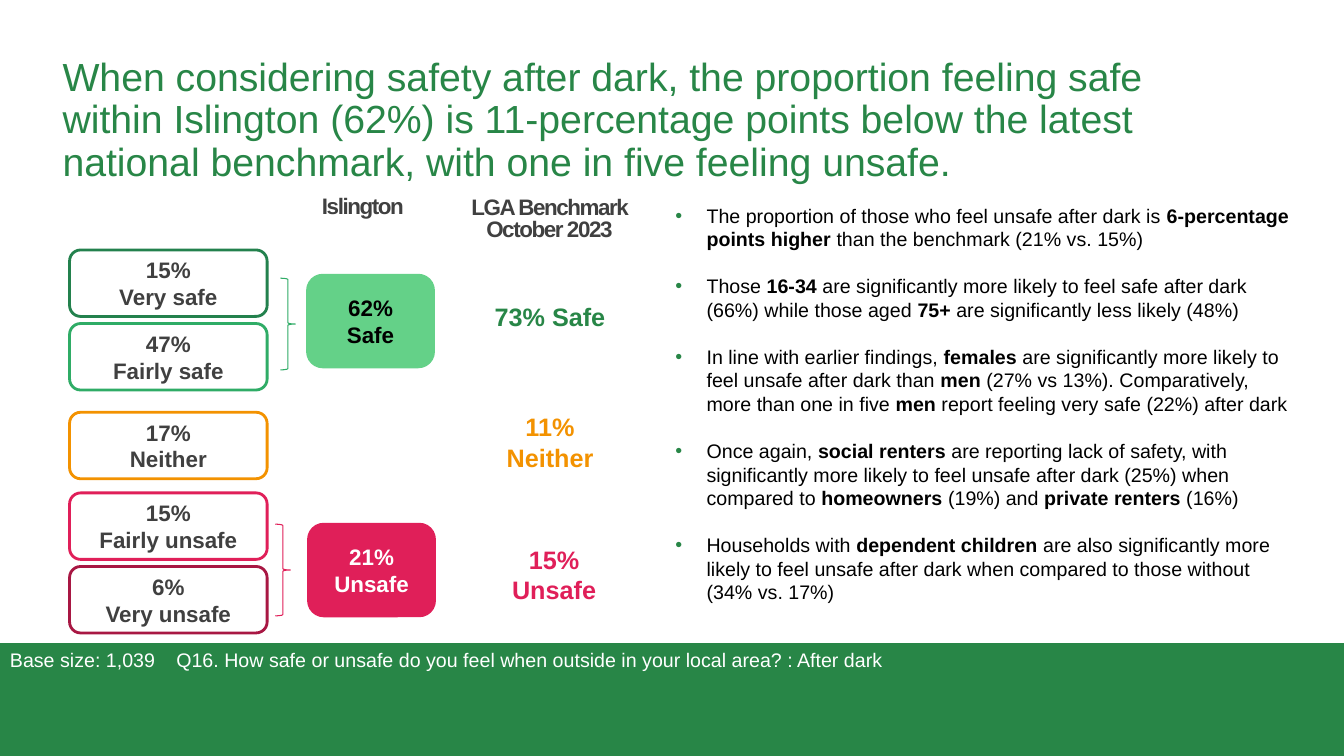
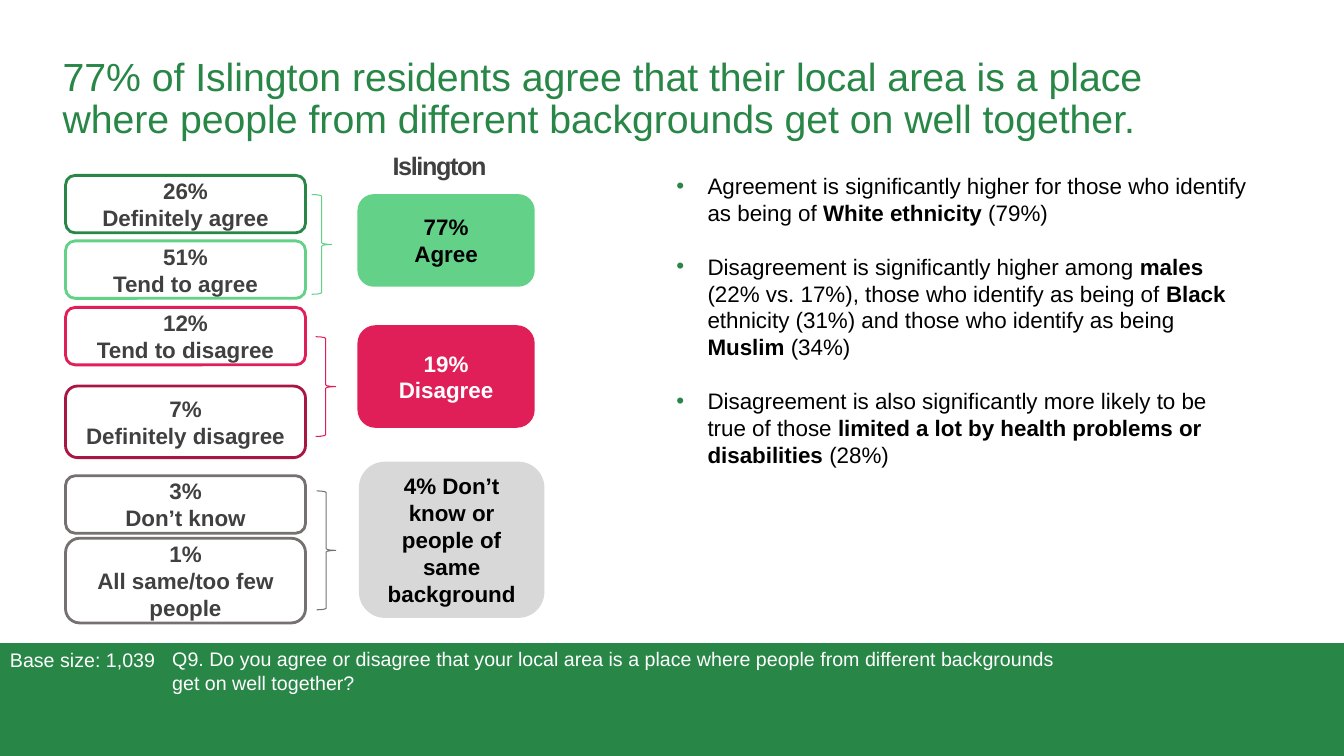
from lxml.etree import SubElement
from pptx import Presentation
from pptx.dml.color import RGBColor
from pptx.enum.shapes import MSO_SHAPE as Shape
from pptx.enum.text import MSO_ANCHOR as Anchor, MSO_AUTO_SIZE as AutoSize, PP_ALIGN as Align
from pptx.oxml.ns import qn
from pptx.util import Inches, Pt

COLORS = {
    "brand": "288647", "dark_green": "23814D", "green": "2FAC66", "light_green": "64D188",
    "amber": "F39200", "red": "E01F59", "dark_red": "A81743", "grey": "767171",
    "light_grey": "D8D8D8", "label": "404040", "black": "000000", "white": "FFFFFF",
}
FONT = "Arial"
TITLE_BOX = (0.62, 0.57, 11.5, 1.16)
BAND_BOX = (0, 6.38, 13.33, 1.12)
BASE_SIZE = "Base size: 1,039"


def color(name):
    return RGBColor.from_string(COLORS[name])


def write(frame, text, size=16, ink="black", bold=False, align=Align.LEFT, anchor=Anchor.TOP,
          insets=(0.1, 0.05, 0.1, 0.05), wrap=True, leading=None, tracking=None,
          gap=0, bullet=None):
    """Fill a text frame: one paragraph per line, **...** marks bold spans."""
    frame.auto_size = AutoSize.NONE
    frame.word_wrap = wrap
    frame.vertical_anchor = anchor
    (frame.margin_left, frame.margin_top,
     frame.margin_right, frame.margin_bottom) = map(Inches, insets)
    for index, line in enumerate(text.split("\n")):
        para = frame.add_paragraph() if index else frame.paragraphs[0]
        if bullet:
            add_bullet(para, bullet)
        para.alignment = align
        para.space_before = Pt(gap if index else 0)
        if leading:
            para.line_spacing = leading
        for part, words in enumerate(line.split("**")):
            if not words:
                continue
            span = para.add_run()
            span.text = words
            span.font.name = FONT
            span.font.size = Pt(size)
            span.font.bold = bold or part % 2 == 1
            span.font.color.rgb = color(ink)
            if tracking is not None:
                span.font._element.set("spc", str(int(tracking * 100)))


def add_bullet(para, ink, indent=0.31):
    props = para._p.get_or_add_pPr()
    props.set("marL", str(Inches(indent)))
    props.set("indent", str(-Inches(indent)))
    tint = SubElement(props, qn("a:buClr"))
    SubElement(tint, qn("a:srgbClr")).set("val", COLORS[ink])
    SubElement(props, qn("a:buFont")).set("typeface", FONT)
    SubElement(props, qn("a:buChar")).set("char", "•")


def add_text(page, box, text, **format):
    write(page.shapes.add_textbox(*map(Inches, box)).text_frame, text, **format)


def add_figure(page, kind, box, fill=None, line=None, weight=2):
    shape = page.shapes.add_shape(kind, *map(Inches, box))
    shape.shadow.inherit = False
    if fill:
        shape.fill.solid()
        shape.fill.fore_color.rgb = color(fill)
    else:
        shape.fill.background()
    if line:
        shape.line.color.rgb = color(line)
        shape.line.width = Pt(weight)
    else:
        shape.line.fill.background()
    return shape


def add_tile(page, box, text, ink="label", **look):
    tile = add_figure(page, Shape.ROUNDED_RECTANGLE, box, **look)
    write(tile.text_frame, text, ink=ink, bold=True, align=Align.CENTER, anchor=Anchor.MIDDLE)


def add_heading(page, box, text, size=16):
    add_text(page, box, text, size=size, ink="label", bold=True, align=Align.CENTER,
             insets=(0, 0.04, 0, 0.04), leading=0.8, tracking=-1)


def add_answers(page, box, answers):
    """Stack outlined answers; each has a gap above, a height, a text and a colour."""
    left, top, width = box
    for gap, height, text, line in answers:
        top += gap
        add_tile(page, (left, top, width, height), text, line=line)
        top += height


def add_brace(page, box, line):
    add_figure(page, Shape.RIGHT_BRACE, box, line=line, weight=0.75)


def add_findings(page, box, findings, size):
    add_text(page, box, "\n".join(findings), size=size, gap=size * 1.2, bullet="brand")


def add_question(page, box, text):
    add_text(page, (0, BAND_BOX[1], 1.65, 0.34), BASE_SIZE, size=14, ink="white", wrap=False)
    add_text(page, box, text, size=14, ink="white")


def add_page(deck, title):
    page = deck.slides.add_slide(deck.slide_layouts[5])
    holder = page.shapes.title
    holder.left, holder.top, holder.width, holder.height = map(Inches, TITLE_BOX)
    write(holder.text_frame, title, size=28, ink="brand", insets=(0, 0, 0, 0), leading=0.9)
    return page


def add_safety_page(deck):
    page = add_page(deck, "When considering safety after dark, the proportion feeling safe within "
                    "Islington (62%) is 11-percentage points below the latest national benchmark, "
                    "with one in five feeling unsafe.")
    add_answers(page, (0.69, 2.48, 1.96), [
        (0, 0.66, "15%\nVery safe", "dark_green"),
        (0.07, 0.66, "47%\nFairly safe", "green"),
        (0.22, 0.66, "17%\nNeither", "amber"),
        (0.14, 0.66, "15%\nFairly unsafe", "red"),
        (0.07, 0.66, "6%\nVery unsafe", "dark_red"),
    ])
    add_brace(page, (2.78, 2.76, 0.15, 0.91), "green")
    add_brace(page, (2.73, 5.2, 0.15, 0.91), "red")

    # Totals
    add_heading(page, (3.05, 1.92, 1.1, 0.55), "Islington")
    add_tile(page, (3.05, 2.73, 1.25, 0.91), "62%\nSafe", "black",
             fill="light_green", line="light_green")
    add_tile(page, (3.06, 5.2, 1.25, 0.91), "21%\nUnsafe", "white", fill="red", line="red")

    # Benchmark
    add_heading(page, (4.6, 1.93, 1.7, 0.55), "LGA Benchmark October 2023")
    for left, top, text, ink in [
        (4.65, 2.68, "73% Safe", "brand"),
        (4.65, 3.93, "11%\nNeither", "amber"),
        (4.69, 5.24, "15%\nUnsafe", "red"),
    ]:
        add_text(page, (left, top, 1.61, 0.91), text, size=18, ink=ink, bold=True,
                 align=Align.CENTER, anchor=Anchor.MIDDLE)

    add_findings(page, (6.6, 1.97, 6.36, 4.11), [
        "The proportion of those who feel unsafe after dark is **6-percentage points higher** "
        "than the benchmark (21% vs. 15%)",
        "Those **16-34** are significantly more likely to feel safe after dark (66%) while those "
        "aged **75+** are significantly less likely (48%)",
        "In line with earlier findings, **females** are significantly more likely to feel unsafe "
        "after dark than **men** (27% vs 13%). Comparatively, more than one in five **men** "
        "report feeling very safe (22%) after dark",
        "Once again, **social renters** are reporting lack of safety, with significantly more "
        "likely to feel unsafe after dark (25%) when compared to **homeowners** (19%) and "
        "**private renters** (16%)",
        "Households with **dependent children** are also significantly more likely to feel unsafe "
        "after dark when compared to those without (34% vs. 17%)",
    ], size=14)
    add_question(page, (1.65, 6.38, 8.28, 0.34),
                 "Q16. How safe or unsafe do you feel when outside in your local area? : After dark")
    return page


def add_cohesion_page(deck):
    page = add_page(deck, "77% of Islington residents agree that their local area is a place where "
                    "people from different backgrounds get on well together.")
    add_answers(page, (0.65, 1.74, 2.38), [
        (0, 0.57, "26%\nDefinitely agree", "brand"),
        (0.08, 0.57, "51%\nTend to agree", "light_green"),
        (0.09, 0.57, "12%\nTend to disagree", "red"),
        (0.21, 0.71, "7%\nDefinitely disagree", "dark_red"),
        (0.18, 0.57, "3%\nDon’t know", "grey"),
        (0.05, 0.84, "1%\nAll same/too few people", "grey"),
    ])
    add_brace(page, (3.09, 1.93, 0.2, 0.99), "light_green")
    add_brace(page, (3.13, 3.34, 0.2, 0.99), "red")
    add_brace(page, (3.14, 4.87, 0.19, 1.18), "grey")

    # Totals
    add_heading(page, (3.76, 1.51, 1.2, 0.4), "Islington", size=18)
    add_tile(page, (3.56, 1.94, 1.73, 0.89), "77%\nAgree", "black",
             fill="light_green", line="light_green")
    add_tile(page, (3.56, 3.24, 1.73, 0.99), "19%\nDisagree", "white", fill="red", line="red")
    add_tile(page, (3.56, 4.58, 1.84, 1.55), "4% Don’t know or people of same background",
             "black", fill="light_grey")

    add_findings(page, (6.61, 1.66, 5.87, 3.06), [
        "Agreement is significantly higher for those who identify as being of "
        "**White ethnicity** (79%)",
        "Disagreement is significantly higher among **males** (22% vs. 17%), those who identify "
        "as being of **Black** ethnicity (31%) and those who identify as being **Muslim** (34%)",
        "Disagreement is also significantly more likely to be true of those "
        "**limited a lot by health problems or disabilities** (28%)",
    ], size=16)
    add_question(page, (1.61, 6.37, 9.09, 0.57),
                 "Q9. Do you agree or disagree that your local area is a place where people from "
                 "different backgrounds get on well together?")
    return page


def main():
    deck = Presentation()
    deck.slide_width, deck.slide_height = Inches(13.33), Inches(7.5)
    page = add_safety_page(deck)
    add_cohesion_page(deck)
    # The band belongs to the shared layout, behind everything else
    band = add_figure(page, Shape.RECTANGLE, BAND_BOX, fill="brand")
    page.slide_layout.shapes.element.insert(2, band.element)
    deck.save("out.pptx")


if __name__ == "__main__":
    main()
